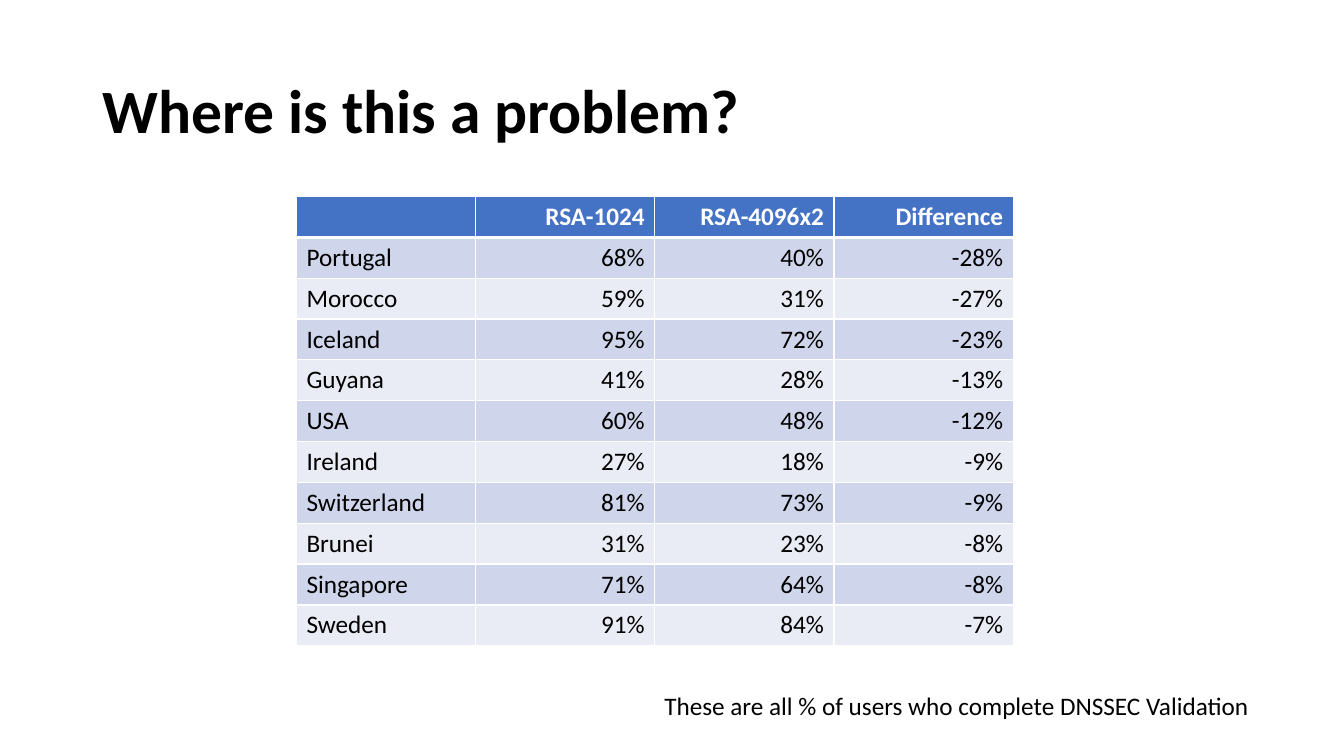
from lxml import etree
from pptx import Presentation
from pptx.dml.color import RGBColor
from pptx.enum.text import MSO_ANCHOR, PP_ALIGN
from pptx.oxml.ns import qn
from pptx.util import Inches, Pt

LEFT, RIGHT = PP_ALIGN.LEFT, PP_ALIGN.RIGHT
TOP, MIDDLE = MSO_ANCHOR.TOP, MSO_ANCHOR.MIDDLE

FONT = "Calibri"
BLACK, WHITE = "000000", "FFFFFF"
HEADER_BLUE = "4472C4"
BANDS = ("CFD5EA", "E9EBF5")

HEADINGS = ("", "RSA-1024", "RSA-4096x2", "Difference")
COUNTRIES = (
    ("Portugal", "68%", "40%", "-28%"),
    ("Morocco", "59%", "31%", "-27%"),
    ("Iceland", "95%", "72%", "-23%"),
    ("Guyana", "41%", "28%", "-13%"),
    ("USA", "60%", "48%", "-12%"),
    ("Ireland", "27%", "18%", "-9%"),
    ("Switzerland", "81%", "73%", "-9%"),
    ("Brunei", "31%", "23%", "-8%"),
    ("Singapore", "71%", "64%", "-8%"),
    ("Sweden", "91%", "84%", "-7%"),
)


def color(hex_string):
    return RGBColor.from_string(hex_string)


def write(frame, text, size=18, fill=BLACK, bold=False, align=LEFT, spacing=None):
    paragraph = frame.paragraphs[0]
    paragraph.alignment = align
    paragraph.line_spacing = spacing
    run = paragraph.add_run()
    run.text = text
    run.font.name = FONT
    run.font.size = Pt(size)
    run.font.bold = bold
    run.font.color.rgb = color(fill)


def add_label(slide, box, text, anchor=TOP, wrap=True, **style):
    frame = slide.shapes.add_textbox(*map(Inches, box)).text_frame
    frame.word_wrap = wrap
    frame.vertical_anchor = anchor
    write(frame, text, **style)


def set_borders(cell, **widths):
    properties = cell._tc.get_or_add_tcPr()
    for side in "LRTB":
        line = etree.SubElement(properties, qn(f"a:ln{side}"),
                                w=str(Pt(widths.get(side, 1))))
        solid = etree.SubElement(line, qn("a:solidFill"))
        etree.SubElement(solid, qn("a:srgbClr"), val=WHITE)


def add_validation_table(slide, box):
    rows = (HEADINGS,) + COUNTRIES
    left, top, width, height = map(Inches, box)
    table = slide.shapes.add_table(len(rows), len(HEADINGS),
                                   left, top, width, height).table
    for r, values in enumerate(rows):
        header = r == 0
        # Thick rule between the header and the first country
        rule = {0: {"B": 3}, 1: {"T": 3}}.get(r, {})
        for c, value in enumerate(values):
            cell = table.cell(r, c)
            set_borders(cell, **rule)
            cell.fill.solid()
            cell.fill.fore_color.rgb = color(HEADER_BLUE if header else BANDS[(r - 1) % 2])
            if value:
                write(cell.text_frame, value, bold=header,
                      fill=WHITE if header else BLACK,
                      align=RIGHT if c else LEFT)


def build_slide(presentation):
    slide = presentation.slides.add_slide(presentation.slide_layouts[6])
    # Title
    add_label(slide, (0.92, 0.4, 11.5, 1.45), "Where is this a problem?",
              anchor=MIDDLE, size=44, bold=True, spacing=0.9)
    # Validation rates by country
    add_validation_table(slide, (2.94, 1.95, 7.11, 4.46))
    # Footnote
    add_label(slide, (6.49, 6.8, 6.07, 0.4),
              "These are all % of users who complete DNSSEC Validation", wrap=False)


def main():
    presentation = Presentation()
    presentation.slide_width = Inches(13.33)
    presentation.slide_height = Inches(7.5)
    build_slide(presentation)
    presentation.save("out.pptx")


if __name__ == "__main__":
    main()
